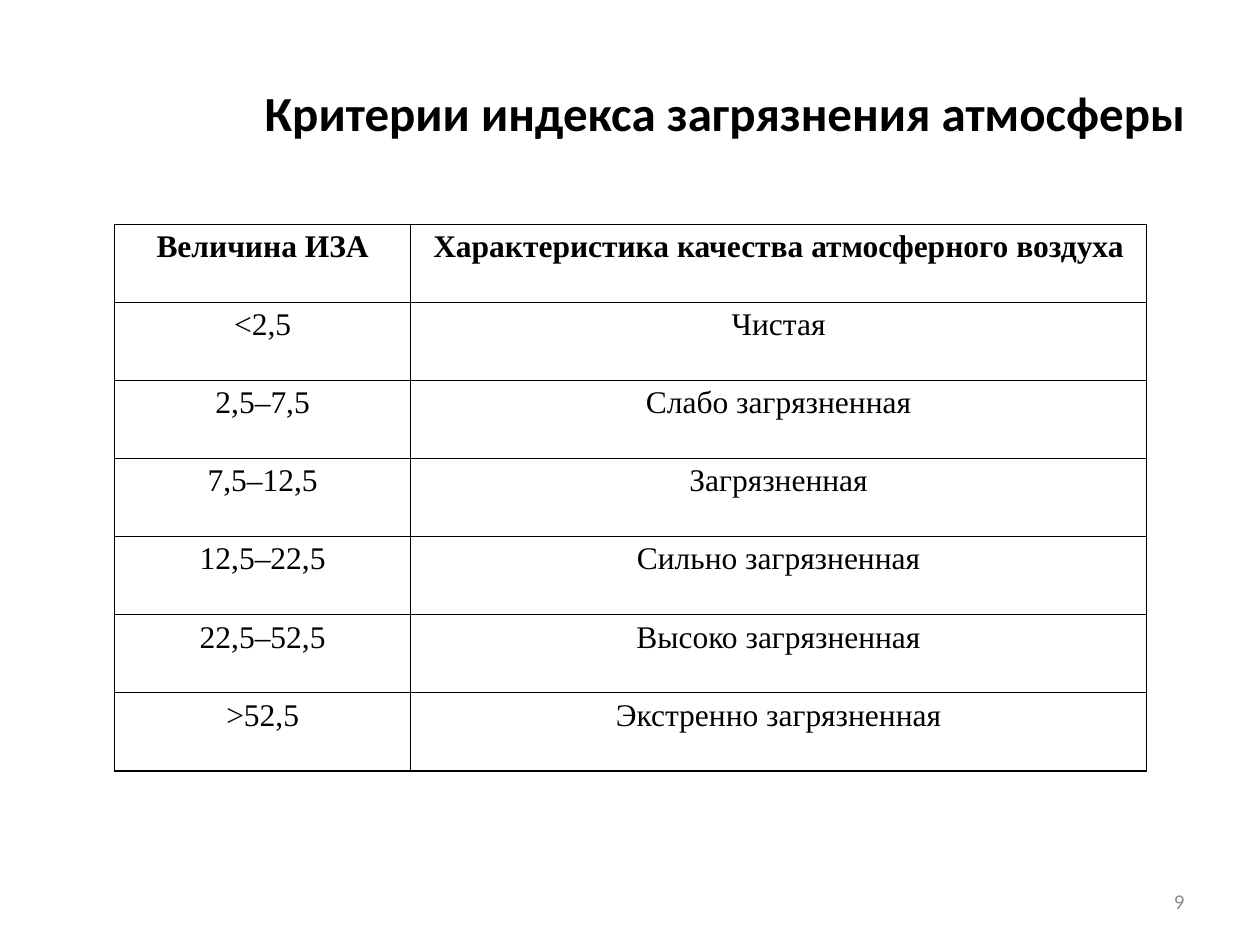
from dataclasses import dataclass

from lxml.etree import SubElement
from pptx import Presentation
from pptx.dml.color import RGBColor
from pptx.enum.text import MSO_ANCHOR as Anchor, PP_ALIGN as Align
from pptx.oxml.ns import qn
from pptx.slide import Slide
from pptx.table import _Cell as Cell
from pptx.text.text import _Paragraph as Paragraph
from pptx.util import Inches, Pt

WIDTH, HEIGHT = Inches(10), Inches(7.5)
COLORS = {"text": "000000", "border": "000000", "number": "8C8C8C", "paper": "FFFFFF"}


@dataclass(frozen=True)
class TextStyle:
    font: str
    size: float
    color: str
    bold: bool = False


@dataclass(frozen=True)
class Label:
    text: str
    left: float
    top: float
    width: float
    height: float
    style: TextStyle


@dataclass(frozen=True)
class Criterion:
    index: str
    quality: str


HEADER_STYLE = TextStyle("Times New Roman", 18, "text", True)
BODY_STYLE = TextStyle("Times New Roman", 18, "text")

LABELS = [
    Label("Критерии индекса загрязнения атмосферы", 0.05, 0.04, 0.9, 0.156,
          TextStyle("Calibri", 28, "text", True)),
    Label("9", 0.717, 0.927, 0.233, 0.053, TextStyle("Calibri", 12, "number")),
]

CRITERIA = [
    Criterion("Величина ИЗА", "Характеристика качества атмосферного воздуха"),
    Criterion("<2,5", "Чистая"),
    Criterion("2,5–7,5", "Слабо загрязненная"),
    Criterion("7,5–12,5", "Загрязненная"),
    Criterion("12,5–22,5", "Сильно загрязненная"),
    Criterion("22,5–52,5", "Высоко загрязненная"),
    Criterion(">52,5", "Экстренно загрязненная"),
]
TABLE_LEFT, TABLE_TOP = Inches(0.91), Inches(1.78)
COLUMN_WIDTHS = [Inches(2.35), Inches(5.84)]
ROW_HEIGHT = Inches(0.62)


def format_paragraph(paragraph: Paragraph, style: TextStyle, alignment: Align) -> None:
    paragraph.alignment = alignment
    for run in paragraph.runs:
        run.font.name = style.font
        run.font.size = Pt(style.size)
        run.font.bold = style.bold
        run.font.color.rgb = RGBColor.from_string(COLORS[style.color])


def add_label(slide: Slide, label: Label) -> None:
    box = slide.shapes.add_textbox(
        int(WIDTH * label.left), int(HEIGHT * label.top),
        int(WIDTH * label.width), int(HEIGHT * label.height))
    frame = box.text_frame
    frame.word_wrap = True
    frame.vertical_anchor = Anchor.MIDDLE
    frame.text = label.text
    format_paragraph(frame.paragraphs[0], label.style, Align.RIGHT)


def add_borders(cell: Cell) -> None:
    properties = cell._tc.get_or_add_tcPr()
    for position, side in enumerate(("lnL", "lnR", "lnT", "lnB")):
        line = properties.makeelement(qn(f"a:{side}"), {"w": str(Pt(1))})
        fill = SubElement(line, qn("a:solidFill"))
        SubElement(fill, qn("a:srgbClr"), val=COLORS["border"])
        properties.insert(position, line)


def fill_cell(cell: Cell, text: str, style: TextStyle) -> None:
    cell.margin_left = cell.margin_right = Inches(0.07)
    cell.margin_top = cell.margin_bottom = 0
    cell.vertical_anchor = Anchor.TOP
    cell.fill.solid()
    cell.fill.fore_color.rgb = RGBColor.from_string(COLORS["paper"])
    cell.text_frame.text = text
    paragraph = cell.text_frame.paragraphs[0]
    paragraph.line_spacing = 1.15
    format_paragraph(paragraph, style, Align.CENTER)
    add_borders(cell)


def add_criteria_table(slide: Slide) -> None:
    table = slide.shapes.add_table(
        len(CRITERIA), len(COLUMN_WIDTHS), TABLE_LEFT, TABLE_TOP,
        sum(COLUMN_WIDTHS), ROW_HEIGHT * len(CRITERIA)).table
    table.first_row = table.horz_banding = False
    for column, width in zip(table.columns, COLUMN_WIDTHS):
        column.width = width
    for row_index, criterion in enumerate(CRITERIA):
        style = BODY_STYLE if row_index else HEADER_STYLE
        for column_index, text in enumerate((criterion.index, criterion.quality)):
            fill_cell(table.cell(row_index, column_index), text, style)


def main() -> None:
    presentation = Presentation()
    presentation.slide_width, presentation.slide_height = WIDTH, HEIGHT
    slide = presentation.slides.add_slide(presentation.slide_layouts[6])
    for label in LABELS:
        add_label(slide, label)
    add_criteria_table(slide)
    presentation.save("out.pptx")


if __name__ == "__main__":
    main()
